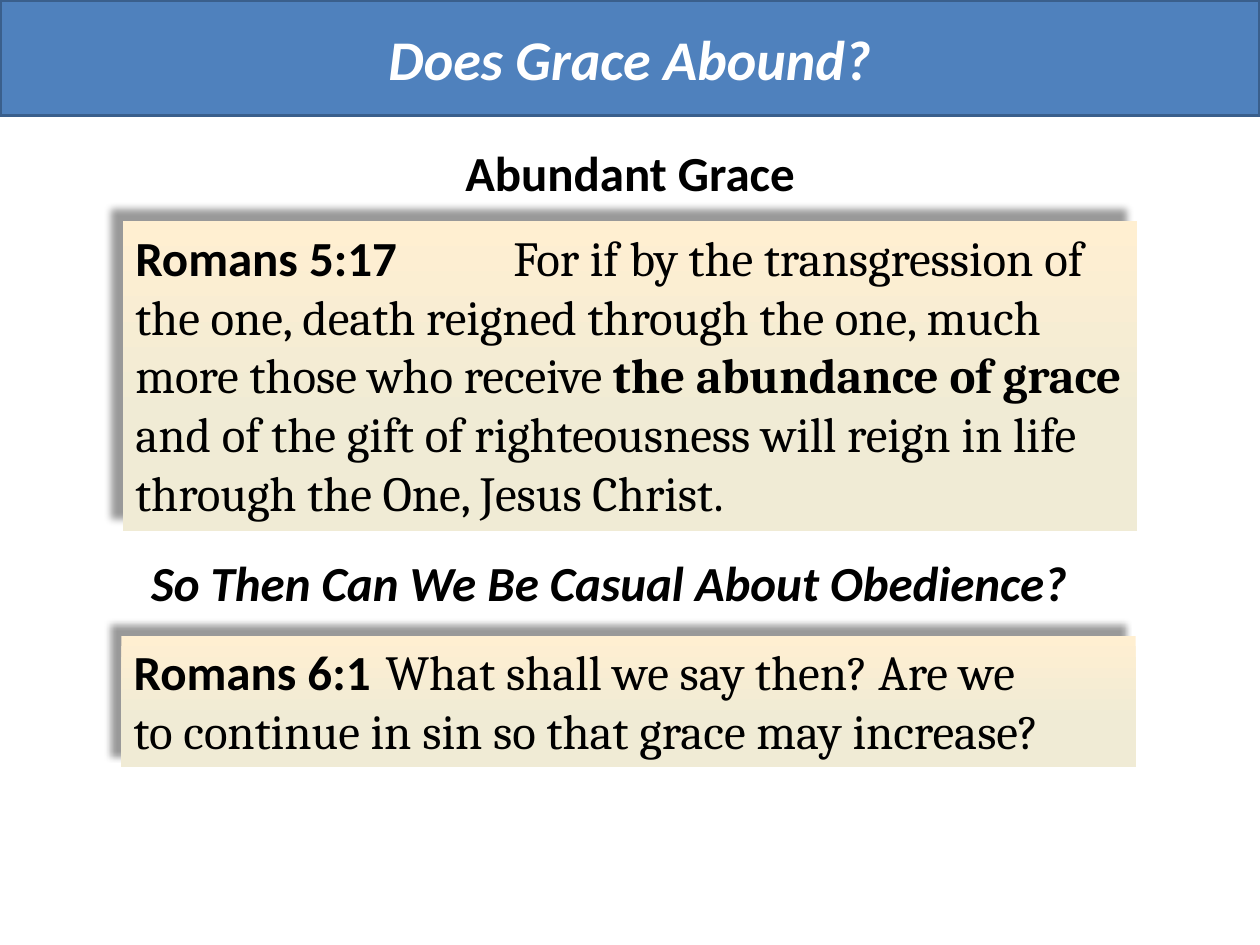
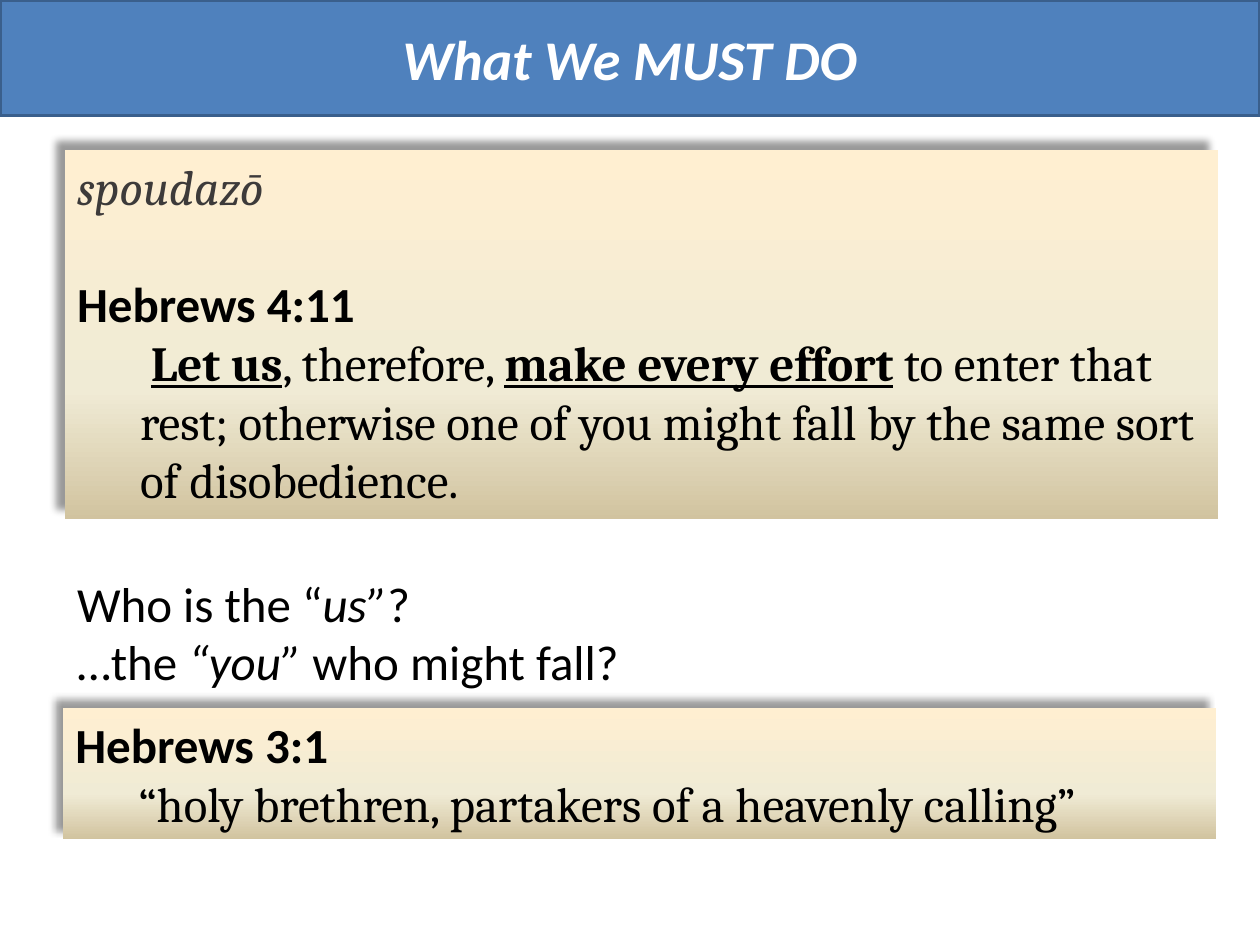
from lxml.etree import SubElement
from pptx import Presentation
from pptx.dml.color import RGBColor
from pptx.enum.text import MSO_ANCHOR, MSO_AUTO_SIZE, PP_ALIGN
from pptx.oxml.ns import qn
from pptx.util import Pt

COLORS = {
    "band": "4F81BD",
    "band_edge": "3A5F8C",
    "title": "FFFFFF",
    "text": "000000",
    "greek": "3D3A3A",
    "shadow": "000000",
    "cream": "FFEFD1",
    "ivory": "F0EBD5",
    "sand": "D1C39F",
}
SANS, SERIF = "Calibri", "Cambria"
TITLE_SIZE, BODY_SIZE = 32, 28
SLIDE_WIDTH, SLIDE_HEIGHT, BAND_HEIGHT = 720, 540, 66
INDENT = 36
HARD_SPACE = chr(160)
LIGHT_STOPS = [(0, "cream"), (65, "ivory")]
SAND_STOPS = LIGHT_STOPS + [(100, "sand")]


def rgb(name):
    return RGBColor.from_string(COLORS[name])


def style_font(font, name=SANS, size=BODY_SIZE, color="text", bold=None, italic=None):
    font.name, font.size = name, Pt(size)
    font.bold, font.italic = bold, italic
    font.color.rgb = rgb(color)


def add_title(slide, wording):
    band = slide.shapes.title
    band.left, band.top, band.width, band.height = Pt(0), Pt(0), Pt(SLIDE_WIDTH), Pt(BAND_HEIGHT)
    band.fill.solid()
    band.fill.fore_color.rgb = rgb("band")
    band.line.color.rgb = rgb("band_edge")
    band.line.width = Pt(2)
    frame = band.text_frame
    frame.text = wording
    frame.auto_size = MSO_AUTO_SIZE.NONE
    frame.vertical_anchor = MSO_ANCHOR.MIDDLE
    heading = frame.paragraphs[0]
    heading.alignment = PP_ALIGN.CENTER
    style_font(heading.font, size=TITLE_SIZE, color="title", bold=True, italic=True)


def add_text(slide, box, lines):
    area = slide.shapes.add_textbox(*map(Pt, box))
    frame = area.text_frame
    frame.word_wrap = True
    for index, line in enumerate(lines):
        paragraph = frame.add_paragraph() if index else frame.paragraphs[0]
        paragraph.alignment = line.get("align", PP_ALIGN.LEFT)
        paragraph.space_after = Pt(line.get("after", 0))
        settings = paragraph._p.get_or_add_pPr()
        if line.get("indented"):
            paragraph.level = 1
            settings.set("marL", str(Pt(INDENT)))
        if line.get("tab"):
            tabs = SubElement(settings, qn("a:tabLst"))
            SubElement(tabs, qn("a:tab"), pos=str(Pt(line["tab"])), algn="l")
        style_font(paragraph.font, **line.get("font", {}))
        for wording, emphasis in line["parts"]:
            run = paragraph.add_run()
            run.text = wording
            for attribute, value in emphasis.items():
                setattr(run.font, attribute, value)
    return area


def add_color(parent, name):
    return SubElement(parent, qn("a:srgbClr"), val=COLORS[name])


def add_verse(slide, box, lines, stops, shadow_distance):
    card = add_text(slide, box, lines)
    card.fill.gradient()
    card.fill.gradient_angle = 270
    properties = card._element.spPr
    stop_list = properties.find(qn("a:gradFill")).find(qn("a:gsLst"))
    stop_list.clear()
    for percent, name in stops:
        add_color(SubElement(stop_list, qn("a:gs"), pos=str(percent * 1000)), name)
    card.shadow.inherit = False
    shadow = SubElement(
        properties.find(qn("a:effectLst")), qn("a:outerShdw"),
        blurRad=str(Pt(4)), dist=str(Pt(shadow_distance)),
        dir=str(225 * 60000), algn="br", rotWithShape="0",
    )
    SubElement(add_color(shadow, "shadow"), qn("a:alpha"), val="40000")


def plain(wording, **font):
    return {"parts": [(wording, {})], "font": font}


def centered(wording, **font):
    return plain(wording, **font) | {"align": PP_ALIGN.CENTER}


def passage(*parts, indented=False, tab=None):
    return {"parts": parts, "font": {"name": SERIF}, "indented": indented, "tab": tab}


def build_grace(slide):
    reference = {"name": SANS, "bold": True}
    add_title(slide, "Does Grace Abound?")
    add_text(slide, (42, 78, 636, 41), [centered("Abundant Grace", bold=True)])
    add_verse(slide, (70.2, 126.3, 579.6, 177), [passage(
        ("Romans 5:17\t", reference),
        (f"For if by the transgression of the one, death reigned{HARD_SPACE}through the one, "
         "much more those who receive ", {}),
        ("the abundance of grace", {"bold": True}),
        (" and of the gift of righteousness will reign in life through the One, "
         "Jesus Christ.", {}),
        tab=216,
    )], LIGHT_STOPS, 9)
    add_text(slide, (30, 312, 636, 41), [
        centered("So Then Can We Be Casual About Obedience?", bold=True, italic=True)])
    add_verse(slide, (69.3, 363.2, 579.6, 75), [passage(
        ("Romans 6:1\t", reference),
        (f"What shall we say then? Are we to{HARD_SPACE}continue in sin so that "
         "grace may increase?", {}),
        tab=144,
    )], LIGHT_STOPS, 9)


def build_must_do(slide):
    stressed = {"bold": True, "underline": True}
    quoted = {"italic": True}
    add_title(slide, "What We MUST DO")
    add_verse(slide, (37, 85.8, 659, 211), [
        plain("spoudazō", name=SERIF, color="greek", italic=True) | {"after": 33.3},
        plain("Hebrews 4:11", bold=True),
        passage(
            (" ", {}),
            ("Let us", stressed),
            (", therefore, ", {}),
            ("make every effort", stressed),
            (" to enter that rest; otherwise one of you might fall by the same sort "
             "of disobedience.", {}),
            indented=True,
        ),
    ], SAND_STOPS, 7)
    add_text(slide, (37, 324, 437, 75), [
        {"parts": [("Who is the “", {}), ("us”", quoted), ("?", {})]},
        {"parts": [("…the ", {}), ("“you”", quoted), (" who might fall?", {})]},
    ])
    add_verse(slide, (36, 404.7, 659, 75), [
        plain("Hebrews 3:1", bold=True),
        passage(("“holy brethren, partakers of a heavenly calling”", {}), indented=True),
    ], SAND_STOPS, 7)


def main():
    presentation = Presentation()
    presentation.slide_width, presentation.slide_height = Pt(SLIDE_WIDTH), Pt(SLIDE_HEIGHT)
    title_only = presentation.slide_layouts[5]
    for build in (build_grace, build_must_do):
        build(presentation.slides.add_slide(title_only))
    presentation.save("out.pptx")


if __name__ == "__main__":
    main()
